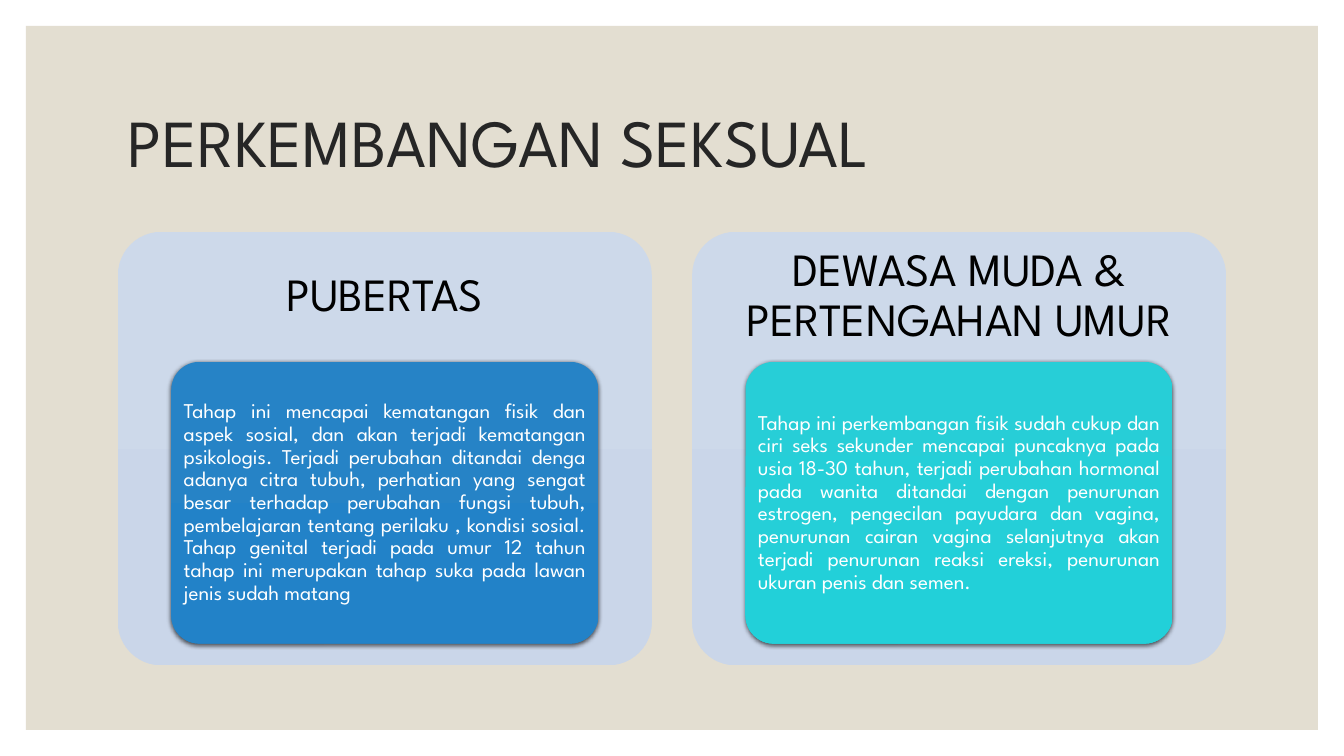
from dataclasses import dataclass

from lxml import etree
from pptx import Presentation
from pptx.dml.color import RGBColor
from pptx.enum.shapes import MSO_SHAPE
from pptx.enum.text import MSO_ANCHOR, PP_ALIGN
from pptx.oxml.ns import qn
from pptx.util import Pt

RECT, ROUND = MSO_SHAPE.RECTANGLE, MSO_SHAPE.ROUNDED_RECTANGLE
LEFT, CENTER, JUSTIFY = PP_ALIGN.LEFT, PP_ALIGN.CENTER, PP_ALIGN.JUSTIFY
MIDDLE = MSO_ANCHOR.MIDDLE


@dataclass(frozen=True)
class Theme:
    font: str = "League Spartan"
    sand: str = "E3DED1"
    ink: str = "262626"
    black: str = "000000"
    white: str = "FFFFFF"
    panel: tuple = ("CDD9EA", "CAD6E9")
    blue: tuple = ("2683C6", "2282C8")
    teal: tuple = ("27CED7", "22D0D9")
    title: int = 48
    head: int = 33
    body: int = 15


class Deck:
    def __init__(self, theme, slide):
        self.theme = theme
        self.slide = slide

    def shape(self, kind, box):
        item = self.slide.shapes.add_shape(kind, *map(Pt, box))
        item.shadow.inherit = False
        item.line.fill.background()
        return item

    def frame(self, box, color):
        fill = self.shape(RECT, box).fill
        fill.solid()
        fill.fore_color.rgb = RGBColor.from_string(color)

    def card(self, box, colors, raised=False):
        item = self.shape(ROUND, box)
        item.adjustments[0] = 0.1
        item.fill.gradient()
        item.fill.gradient_angle = 270
        for stop, color in zip(item.fill.gradient_stops, colors):
            stop.color.rgb = RGBColor.from_string(color)
        if raised:
            self.shade(item)

    def shade(self, item):
        effects = item._element.spPr.find(qn("a:effectLst"))
        values = {"blurRad": Pt(3), "dist": Pt(1), "dir": 90 * 60000}
        shadow = etree.SubElement(effects, qn("a:outerShdw"), rotWithShape="0")
        for name, value in values.items():
            shadow.set(name, str(int(value)))
        color = etree.SubElement(shadow, qn("a:srgbClr"), val=self.theme.black)
        etree.SubElement(color, qn("a:alpha"), val="63000")

    def text(self, box, words, size, color, align, pad):
        frame = self.slide.shapes.add_textbox(*map(Pt, box)).text_frame
        side, edge = map(Pt, pad)
        para = frame.paragraphs[0]
        run = para.add_run()
        formats = (
            (frame, {"word_wrap": True, "vertical_anchor": MIDDLE,
                     "margin_left": side, "margin_right": side,
                     "margin_top": edge, "margin_bottom": edge}),
            (para, {"alignment": align, "line_spacing": 0.9}),
            (run, {"text": words}),
            (run.font, {"name": self.theme.font, "size": Pt(size)}),
            (run.font.color, {"rgb": RGBColor.from_string(color)}),
        )
        for target, values in formats:
            for name, value in values.items():
                setattr(target, name, value)


def main():
    theme = Theme()
    deck = Presentation()
    deck.slide_width, deck.slide_height = Pt(960), Pt(540)
    page = Deck(theme, deck.slides.add_slide(deck.slide_layouts[6]))

    page.frame((18.6, 18.6, 922.8, 502.8), theme.sand)
    page.text((84, 50.4, 792, 108), "PERKEMBANGAN SEKSUAL",
              theme.title, theme.ink, LEFT, (7.2, 3.6))

    stages = (
        ("PUBERTAS", theme.blue,
         "Tahap ini mencapai kematangan fisik dan aspek sosial, dan akan "
         "terjadi kematangan psikologis. Terjadi perubahan ditandai denga "
         "adanya citra tubuh, perhatian yang sengat besar terhadap perubahan "
         "fungsi tubuh, pembelajaran tentang perilaku , kondisi sosial. Tahap "
         "genital terjadi pada umur 12 tahun tahap ini merupakan tahap suka "
         "pada lawan jenis sudah matang"),
        ("DEWASA MUDA & PERTENGAHAN UMUR", theme.teal,
         "Tahap ini perkembangan fisik sudah cukup dan ciri seks sekunder "
         "mencapai puncaknya pada usia 18-30 tahun, terjadi perubahan "
         "hormonal pada wanita ditandai dengan penurunan estrogen, pengecilan "
         "payudara dan vagina, penurunan cairan vagina selanjutnya akan "
         "terjadi penurunan reaksi ereksi, penurunan ukuran penis dan semen."),
    )
    top, width, height, gap = 165.6, 381.4, 309.6, 28.8
    inset, head, inner, pad = width / 10, height * 0.3, height * 0.65, 5.9
    for index, (name, colors, words) in enumerate(stages):
        left = 84.2 + index * (width + gap)
        page.card((left, top, width, height), theme.panel)
        page.text((left, top, width, head), name,
                  theme.head, theme.black, CENTER, (10, 10))
        x, y, wide = left + inset, top + head, width - 2 * inset
        page.card((x, y, wide, inner), colors, raised=True)
        page.text((x + pad, y + pad, wide - 2 * pad, inner - 2 * pad), words,
                  theme.body, theme.white, JUSTIFY, (3, 2.25))

    deck.save("out.pptx")


if __name__ == "__main__":
    main()
